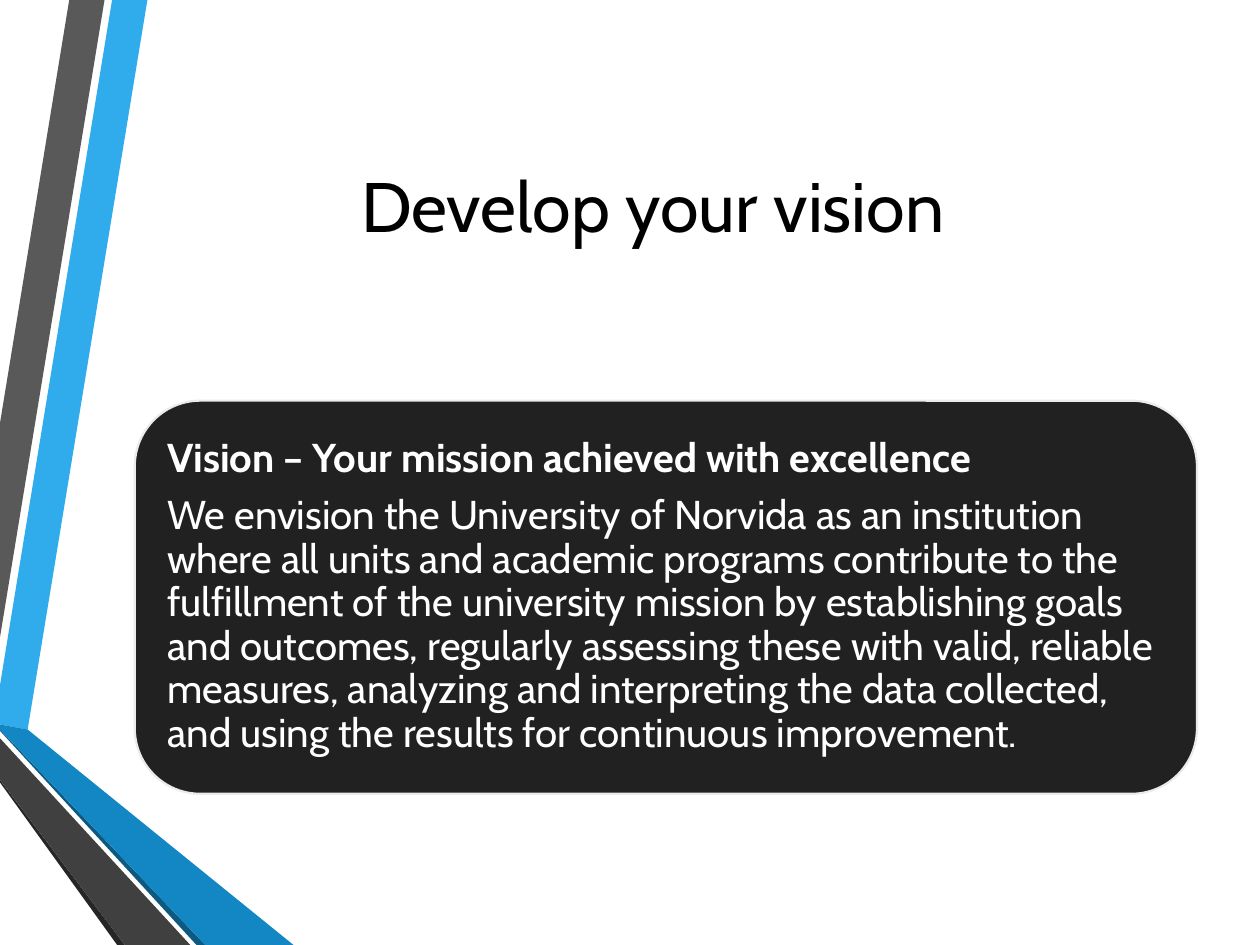
from pptx import Presentation
from pptx.dml.color import RGBColor
from pptx.enum.shapes import MSO_SHAPE
from pptx.enum.text import MSO_ANCHOR, PP_ALIGN
from pptx.util import Inches, Pt

COLORS = {
    "blue": "30ACEC", "blue_dark": "1287C3", "blue_edge": "0C5A82",
    "gray": "595959", "gray_dark": "404040", "gray_edge": "262626",
    "panel": "212121", "panel_line": "EBEBEB",
    "title": "000000", "body": "FFFFFF",
}
COLUMNS, ROWS = 100, 75

# Ribbon outlines in (column, row) points, back to front
RIBBONS = [
    ("blue", [(0, 54.4), (0, 57.5), (2.2, 57.9), (11.7, 0), (8.9, 0)]),
    ("gray", [(8.3, 0), (5.5, 0), (0, 33.6), (0, 50.6)]),
    ("gray_edge", [(0, 61.9), (0, 62.1), (9.3, 75), (9.9, 75)]),
    ("blue_edge", [(0, 57.9), (0, 58), (15.6, 75), (16.3, 75)]),
    ("blue_dark", [(0, 57.9), (16.3, 75), (23.3, 75), (2.2, 57.9), (0, 57.5)]),
    ("gray_dark", [(0, 61.9), (9.9, 75), (15.1, 75), (0, 58.6)]),
]

VISION = [
    ("Vision – Your mission achieved with excellence", True),
    ("We envision the University of Norvida as an institution where all units "
     "and academic programs contribute to the fulfillment of the university "
     "mission by establishing goals and outcomes, regularly assessing these "
     "with valid, reliable measures, analyzing and interpreting the data "
     "collected, and using the results for continuous improvement.", False),
]


def apply(target, values):
    for name, value in values.items():
        setattr(target, name, value)


class SlideBuilder:
    font = "Cabin"

    def __init__(self, presentation):
        self.column = presentation.slide_width / COLUMNS
        self.row = presentation.slide_height / ROWS
        self.slide = presentation.slides.add_slide(presentation.slide_layouts[6])

    def point(self, column, row):
        return round(column * self.column), round(row * self.row)

    def box(self, left, top, width, height):
        return *self.point(left, top), *self.point(width, height)

    def color(self, name):
        return RGBColor.from_string(COLORS[name])

    def paint(self, shape, fill, line=None, line_width=1.25):
        shape.shadow.inherit = False
        shape.fill.solid()
        shape.fill.fore_color.rgb = self.color(fill)
        if line:
            shape.line.color.rgb = self.color(line)
            shape.line.width = Pt(line_width)
        else:
            shape.line.fill.background()

    def ribbon(self, fill, points):
        start, *others = [self.point(*point) for point in points]
        builder = self.slide.shapes.build_freeform(*start)
        builder.add_line_segments(others, close=True)
        self.paint(builder.convert_to_shape(), fill)

    def panel(self, place, fill, line):
        shape = self.slide.shapes.add_shape(
            MSO_SHAPE.ROUNDED_RECTANGLE, *self.box(*place))
        self.paint(shape, fill, line)

    def text(self, place, paragraphs, size, color, frame_format, paragraph_format):
        frame = self.slide.shapes.add_textbox(*self.box(*place)).text_frame
        apply(frame, {"word_wrap": True, "vertical_anchor": MSO_ANCHOR.MIDDLE,
                      **frame_format})
        for index, (words, bold) in enumerate(paragraphs):
            paragraph = frame.add_paragraph() if index else frame.paragraphs[0]
            apply(paragraph, paragraph_format)
            run = paragraph.add_run()
            run.text = words
            apply(run.font, {"name": self.font, "size": Pt(size), "bold": bold})
            run.font.color.rgb = self.color(color)


def main():
    presentation = Presentation()
    apply(presentation, {"slide_width": Inches(10), "slide_height": Inches(7.5)})
    builder = SlideBuilder(presentation)

    # Folded ribbons on the left edge
    for fill, points in RIBBONS:
        builder.ribbon(fill, points)

    # Title
    builder.text((19.2, 9.2, 65.2, 14.1), [("Develop your vision", False)],
                 40, "title", {}, {"alignment": PP_ALIGN.CENTER})

    # Vision statement on its panel
    builder.panel((10.7, 31.8, 84.3, 31.2), "panel", "panel_line")
    margins = {f"margin_{side}": Inches(0.1)
               for side in ("left", "top", "right", "bottom")}
    builder.text((12.3, 33.3, 81.2, 28.1), VISION, 23, "body", margins,
                 {"alignment": PP_ALIGN.LEFT, "line_spacing": 0.9,
                  "space_after": Pt(8)})

    presentation.save("out.pptx")


if __name__ == "__main__":
    main()
